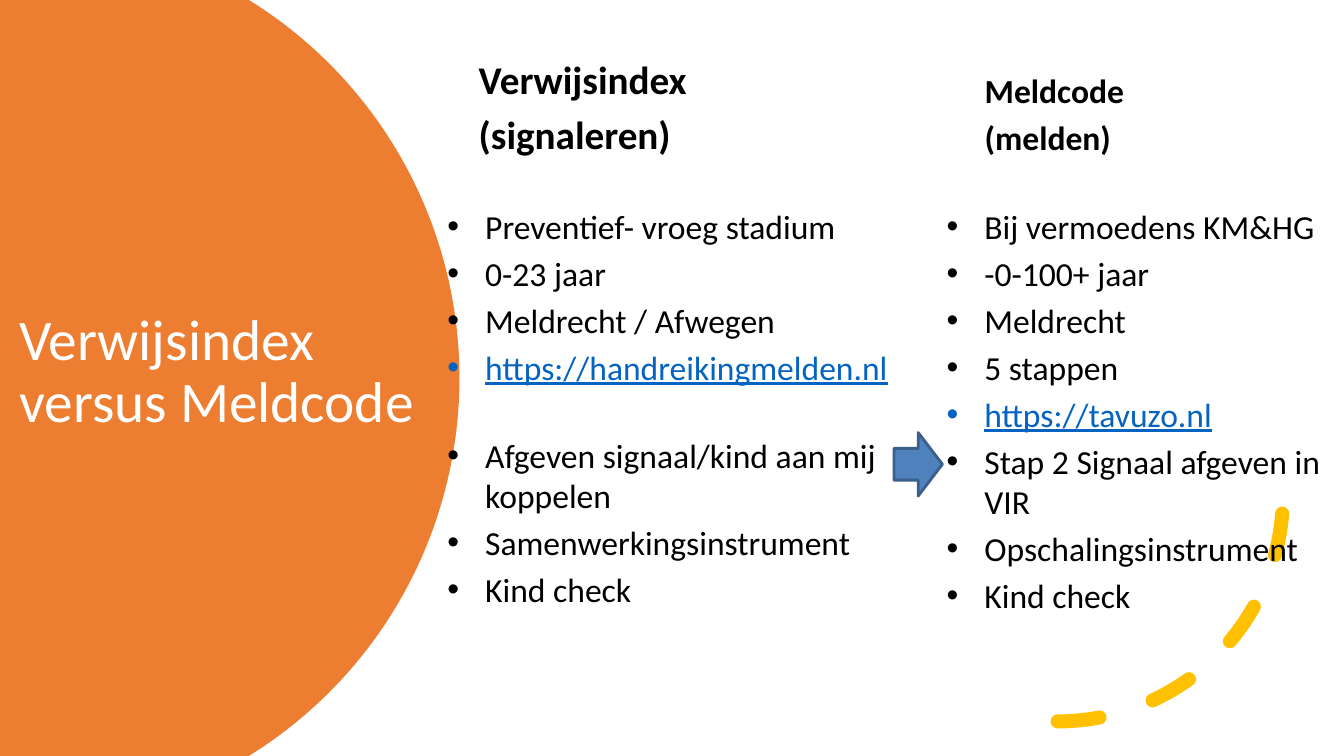
import math
import pptx
import pptx.util
import pptx.dml.color
import pptx.enum.dml
import pptx.enum.shapes
import pptx.enum.text
import pptx.oxml.ns
import lxml.etree

Cm, Pt = pptx.util.Cm, pptx.util.Pt
Shape = pptx.enum.shapes.MSO_SHAPE
Anchor = pptx.enum.text.MSO_ANCHOR

# Content: boxes are left, top, width, height in cm
HUES = {"disc": "ED7D31", "dash": "FFC000", "arrow": "4F81BD", "edge": "3A5F8C",
        "text": "000000", "light": "FFFFFF", "link": "0563C1"}
TITLE = "Verwijsindex versus Meldcode"
TITLE_BOX = (0.23, 3.2, 10.57, 12.4)
HEADS = [
    (1, (11.81, 1.27, 5.94, 2.82), 28, ["Verwijsindex", "(signaleren)"]),
    (3, (24.56, 1.6, 4.17, 2.49), 24, ["Meldcode", "(melden)"]),
]
LISTS = [
    (2, (11.02, 5.05, 11.66, 11.35), [
        "Preventief- vroeg stadium", "0-23 jaar", "Meldrecht / Afwegen",
        "https://handreikingmelden.nl", "Afgeven signaal/kind aan mij koppelen",
        "Samenwerkingsinstrument", "Kind check"]),
    (4, (23.6, 5.05, 10.24, 12.75), [
        "Bij vermoedens KM&HG", "-0-100+ jaar", "Meldrecht", "5 stappen",
        "https://tavuzo.nl", "Stap 2 Signaal afgeven in VIR",
        "Opschalingsinstrument", "Kind check"]),
]
GAP_ITEM = "Afgeven signaal/kind aan mij koppelen"  # set apart by one line
ARC_BOX = (20.98, 6.83, 11.35, 11.35)
ARROW_BOX = (22.53, 10.9, 1.22, 1.6)
WIDE, HIGH = 33.87, 19.05
DISC_X, DISC_R, STEPS = 0.38, 11.2, 120


def hue(name):
    return pptx.dml.color.RGBColor.from_string(HUES[name])


def place(holder, box, anchor):
    holder.left, holder.top, holder.width, holder.height = map(Cm, box)
    frame = holder.text_frame
    frame.word_wrap = True
    frame.auto_size = pptx.enum.text.MSO_AUTO_SIZE.NONE
    frame.vertical_anchor = anchor
    return frame


def write(frame, lines, size, color="text", bold=False):
    for i, line in enumerate(lines):
        para = frame.add_paragraph() if i else frame.paragraphs[0]
        para.alignment = pptx.enum.text.PP_ALIGN.LEFT
        run = para.add_run()
        run.text = line
        font = run.font
        font.name, font.size, font.bold = "Calibri", Pt(size), bold
        link = line.startswith("https:")
        font.color.rgb = hue("link" if link else color)
        if link:
            font.underline = True
        if line == GAP_ITEM:
            para.space_before = Pt(34)


deck = pptx.Presentation()
deck.slide_width, deck.slide_height = Cm(WIDE), Cm(HIGH)
slide = deck.slides.add_slide(deck.slide_layouts[4])
shapes = slide.shapes
tree = shapes.element

# Dashed arc, sent behind the text
arc = shapes.add_shape(Shape.ARC, *map(Cm, ARC_BOX))
arc.shadow.inherit = False
arc.fill.background()
arc.line.color.rgb = hue("dash")
arc.line.width = Pt(10)
arc.line.dash_style = pptx.enum.dml.MSO_LINE.DASH
arc.element.spPr.find(pptx.oxml.ns.qn("a:ln")).set("cap", "rnd")
arc.element.spPr.find(pptx.oxml.ns.qn("a:xfrm")).set("flipV", "1")
tree.insert(2, arc.element)

# Orange disc, cut off by the slide edges
half = HIGH / 2
turn = math.asin(half / DISC_R)
angles = [turn * (2 * i / STEPS - 1) for i in range(STEPS + 1)]
rim = [(Cm(DISC_X + DISC_R * math.cos(a)), Cm(half + DISC_R * math.sin(a)))
       for a in angles]
pen = shapes.build_freeform(0, 0)
pen.add_line_segments(rim + [(0, Cm(HIGH))], close=True)
disc = pen.convert_to_shape()
disc.shadow.inherit = False
disc.fill.solid()
disc.fill.fore_color.rgb = hue("disc")
disc.line.fill.background()
tree.insert(2, disc.element)

# Title
frame = place(shapes.title, TITLE_BOX, Anchor.MIDDLE)
write(frame, [TITLE], 41, "light")
frame.paragraphs[0].line_spacing = 0.9

# Headings and lists
holders = {h.placeholder_format.idx: h for h in slide.placeholders}
for idx, box, size, lines in HEADS:
    write(place(holders[idx], box, Anchor.BOTTOM), lines, size, bold=True)
for idx, box, lines in LISTS:
    write(place(holders[idx], box, Anchor.TOP), lines, 24)

# Arrow between the lists
arrow = shapes.add_shape(Shape.RIGHT_ARROW, *map(Cm, ARROW_BOX))
arrow.shadow.inherit = False
arrow.fill.solid()
arrow.fill.fore_color.rgb = hue("arrow")
arrow.line.color.rgb = hue("edge")
arrow.line.width = Pt(2)

deck.save("out.pptx")
